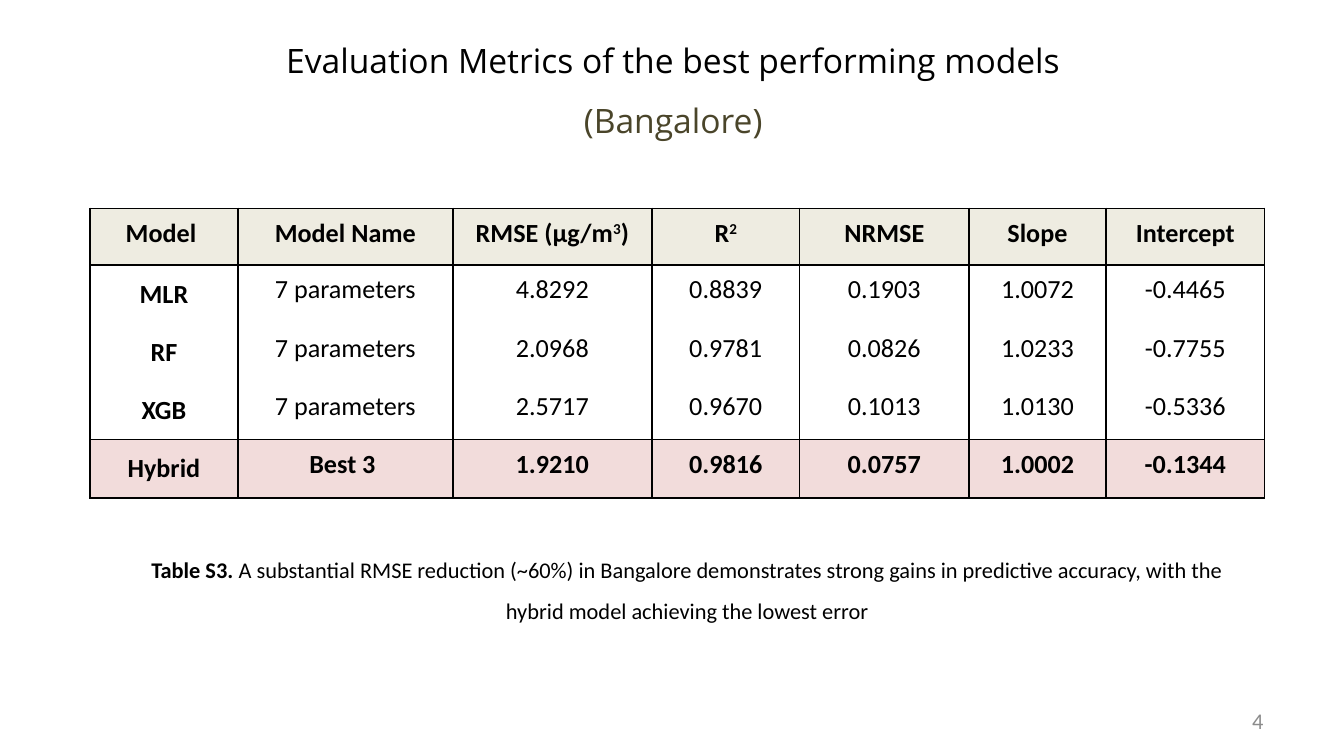
import pptx
import pptx.util
import pptx.oxml
import pptx.oxml.ns
import pptx.dml.color
import pptx.enum.text
from pptx.util import Inches, Pt

HEAD = ["Model ", "Model Name", "RMSE (µg/m^3^)", "R^2^", "NRMSE", "Slope", "Intercept"]
ROWS = [
    ["MLR", "7 parameters", "4.8292", "0.8839", "0.1903", "1.0072", "-0.4465"],
    ["RF", "7 parameters", "2.0968", "0.9781", "0.0826", "1.0233", "-0.7755"],
    ["XGB", "7 parameters", "2.5717", "0.9670", "0.1013", "1.0130", "-0.5336"],
    ["Hybrid", "Best 3 ", "1.9210", "0.9816", "0.0757", "1.0002", "-0.1344"],
]
TITLE = ["Evaluation Metrics of the best performing models", "(Bangalore)"]
NOTE = [
    "Table S3. ",
    "A substantial RMSE reduction (~60%) in Bangalore demonstrates strong gains "
    "in predictive accuracy, with the hybrid model achieving the lowest error",
]
PAGE = "4"

THEME = {
    "ink": "000000", "olive": "4A452A", "grey": "8C8C8C",
    "head": "EEECE1", "best": "F2DCDB",
    "font": "Calibri", "display": "Open Sans",
    "title": 18, "cell": 14, "small": 12, "line": 1,
}
WIDE = 10
HIGH = WIDE * 9 / 16
COLS = [1.1, 1.6, 1.48, 1.1, 1.26, 1.02, 1.18]
ROW = 0.42
ALIGN = pptx.enum.text.PP_ALIGN
MIDDLE = pptx.enum.text.MSO_ANCHOR.MIDDLE


def color(name):
    return pptx.dml.color.RGBColor.from_string(THEME[name])


def style(para, size, face="font", ink="ink", bold=False, align=ALIGN.CENTER):
    para.alignment = align
    para.font.name = THEME[face]
    para.font.size = Pt(THEME[size])
    para.font.bold = bold
    para.font.color.rgb = color(ink)


def add_box(slide, left, top, width, height, anchor=None):
    frame = slide.shapes.add_textbox(*map(Inches, (left, top, width, height))).text_frame
    frame.word_wrap = True
    if anchor is not None:
        frame.vertical_anchor = anchor
    return frame.paragraphs[0]


def add_run(para, text):
    run = para.add_run()
    run.text = text
    return run


def rule(cell, sides):
    space = pptx.oxml.ns.nsdecls("a")
    for side in "LRTB":
        if side in sides:
            fill = f'<a:solidFill><a:srgbClr val="{THEME["ink"]}"/></a:solidFill>'
        else:
            fill = "<a:noFill/>"
        xml = f'<a:ln{side} {space} w="{Pt(THEME["line"])}">{fill}</a:ln{side}>'
        cell._tc.get_or_add_tcPr().append(pptx.oxml.parse_xml(xml))


def fill_cell(cell, text, row, col, last):
    edge = row in (0, last)
    rule(cell, "LR" + ("T" if edge or row == 1 else "") + ("B" if edge or row == last - 1 else ""))
    if edge:
        cell.fill.solid()
        cell.fill.fore_color.rgb = color("best" if row else "head")
    else:
        cell.fill.background()
    pad = Inches(0.1 if row and col == 0 else 0.07)
    cell.margin_left = cell.margin_right = cell.margin_top = cell.margin_bottom = pad
    para = cell.text_frame.paragraphs[0]
    style(para, "cell", bold=edge or col == 0)
    for spot, part in enumerate(text.split("^")):
        if part:
            run = add_run(para, part)
            if spot % 2:
                run.font._element.set("baseline", "30000")


def add_grid(slide):
    data = [HEAD] + ROWS
    size = (0.67, 1.55, sum(COLS), ROW * len(data))
    table = slide.shapes.add_table(len(data), len(COLS), *map(Inches, size)).table
    for col, width in enumerate(COLS):
        table.columns[col].width = Inches(width)
    for row, texts in enumerate(data):
        table.rows[row].height = Inches(ROW)
        for col, text in enumerate(texts):
            fill_cell(table.cell(row, col), text, row, col, len(data) - 1)


def main():
    deck = pptx.Presentation()
    deck.slide_width, deck.slide_height = Inches(WIDE), Inches(HIGH)
    slide = deck.slides.add_slide(deck.slide_layouts[6])

    para = add_box(slide, 0.51, 0.24, 9, 0.71, MIDDLE)
    style(para, "title", face="display")
    para.line_spacing = 1.5
    add_run(para, TITLE[0])
    para.add_line_break()
    add_run(para, TITLE[1]).font.color.rgb = color("olive")

    add_grid(slide)

    para = add_box(slide, 0.9, 3.99, 8.43, 0.68)
    style(para, "small")
    para.line_spacing = 1.5
    add_run(para, NOTE[0]).font.bold = True
    add_run(para, NOTE[1])

    para = add_box(slide, 7.17, 5.21, 2.33, 0.3, MIDDLE)
    style(para, "small", ink="grey", align=ALIGN.RIGHT)
    add_run(para, PAGE)
    deck.save("out.pptx")


if __name__ == "__main__":
    main()
